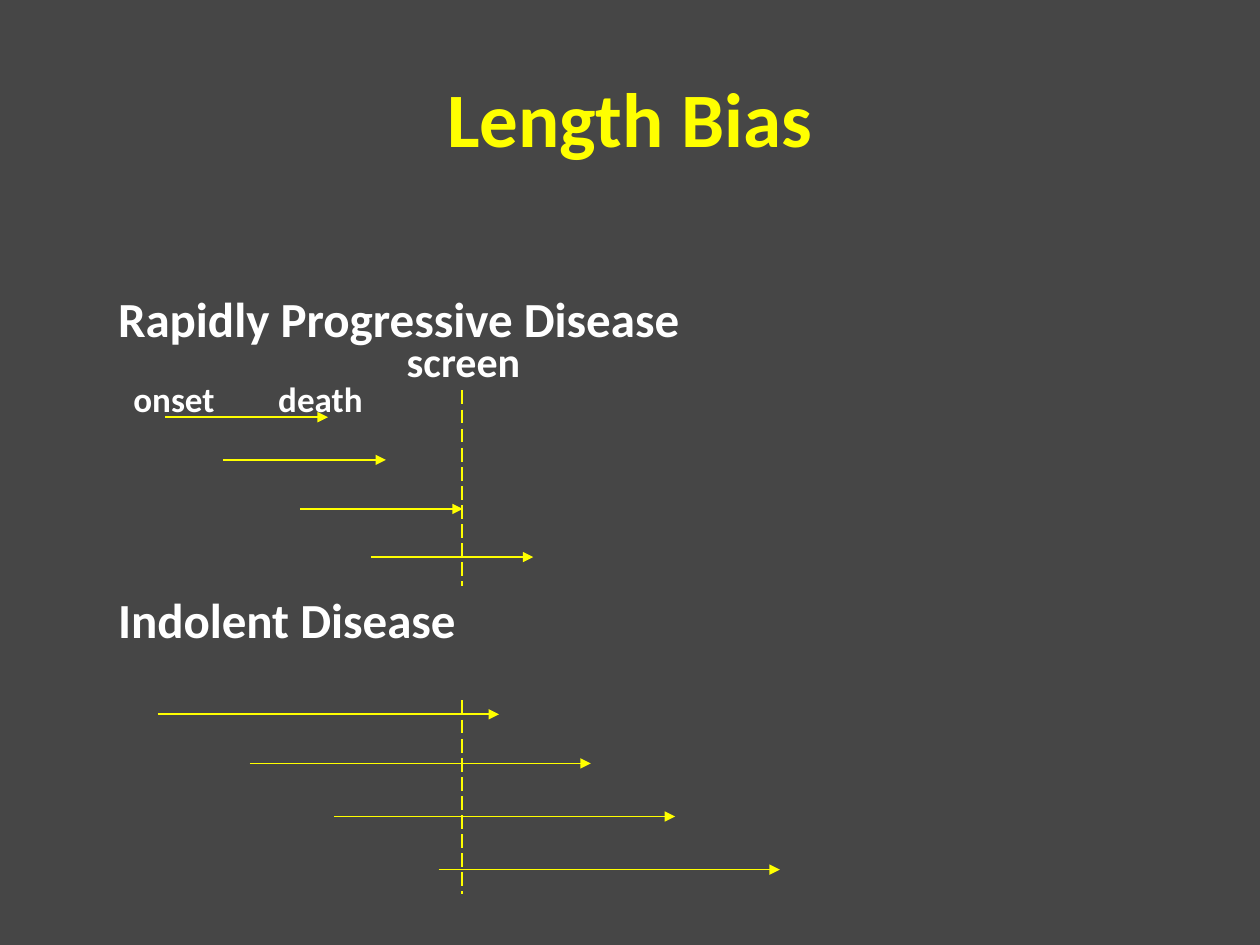
from pptx import Presentation
from pptx.dml.color import RGBColor
from pptx.enum.dml import MSO_LINE
from pptx.enum.shapes import MSO_CONNECTOR
from pptx.enum.text import MSO_ANCHOR, MSO_AUTO_SIZE, PP_ALIGN
from pptx.oxml.ns import qn
from pptx.util import Cm, Pt
from lxml.etree import SubElement

THEME = {
    "font": "Calibri",
    "bg": RGBColor(0x46, 0x46, 0x46),
    "accent": RGBColor(0xFF, 0xFF, 0x00),
    "text": RGBColor(0xFF, 0xFF, 0xFF),
    "title": 44, "heading": 28, "screen": 24, "label": 20, "line": 1,
}
TITLE = ("Length Bias", (1.27, 0.76, 22.86, 3.18))
LABELS = [
    ("Rapidly Progressive Disease", "heading", (2.13, 5.69, 11.96, 1.45)),
    ("Indolent Disease", "heading", (2.13, 11.76, 7.39, 1.45)),
    ("onset", "label", (2.44, 7.49, 2.16, 1.11)),
    ("death", "label", (5.36, 7.49, 2.29, 1.11)),
    ("screen", "screen", (7.95, 6.63, 2.82, 1.27)),
]
SCREEN_X = 9.32
GROUPS = [
    {"length": 3.28, "screen": (7.87, 11.81),
     "onsets": [(3.33, 8.41), (4.5, 9.27), (6.05, 10.26), (7.47, 11.23)]},
    {"length": 6.88, "screen": (14.12, 18.03),
     "onsets": [(3.18, 14.4), (5.03, 15.39), (6.73, 16.46), (8.84, 17.53)]},
]


def add_text(s, text, box, size, color="text", align=PP_ALIGN.LEFT,
             anchor=MSO_ANCHOR.TOP, wrap=False):
    tf = s.shapes.add_textbox(*map(Cm, box)).text_frame
    tf.word_wrap = wrap
    tf.auto_size = MSO_AUTO_SIZE.NONE if wrap else MSO_AUTO_SIZE.SHAPE_TO_FIT_TEXT
    tf.vertical_anchor = anchor
    p = tf.paragraphs[0]
    p.alignment = align
    r = p.add_run()
    r.text = text
    r.font.name, r.font.size, r.font.bold = THEME["font"], Pt(THEME[size]), True
    r.font.color.rgb = THEME[color]


def add_line(s, x1, y1, x2, y2, arrow=False):
    c = s.shapes.add_connector(MSO_CONNECTOR.STRAIGHT, *map(Cm, (x1, y1, x2, y2)))
    c.line.color.rgb = THEME["accent"]
    c.line.width = Pt(THEME["line"])
    if arrow:
        SubElement(c.line._get_or_add_ln(), qn("a:tailEnd"), type="triangle")
    else:
        c.line.dash_style = MSO_LINE.LONG_DASH
    SubElement(c._element.spPr, qn("a:effectLst"))


def main():
    """Build the length bias slide."""
    prs = Presentation()
    prs.slide_width, prs.slide_height = Cm(25.4), Cm(19.05)
    s = prs.slides.add_slide(prs.slide_layouts[6])
    s.background.fill.solid()
    s.background.fill.fore_color.rgb = THEME["bg"]
    add_text(s, *TITLE, size="title", color="accent", align=PP_ALIGN.CENTER,
             anchor=MSO_ANCHOR.MIDDLE, wrap=True)
    for text, size, box in LABELS:
        add_text(s, text, box, size=size)
    for group in GROUPS:
        for x, y in group["onsets"]:
            add_line(s, x, y, x + group["length"], y, arrow=True)
        top, bottom = group["screen"]
        add_line(s, SCREEN_X, top, SCREEN_X, bottom)
    prs.save("out.pptx")


if __name__ == "__main__":
    main()
